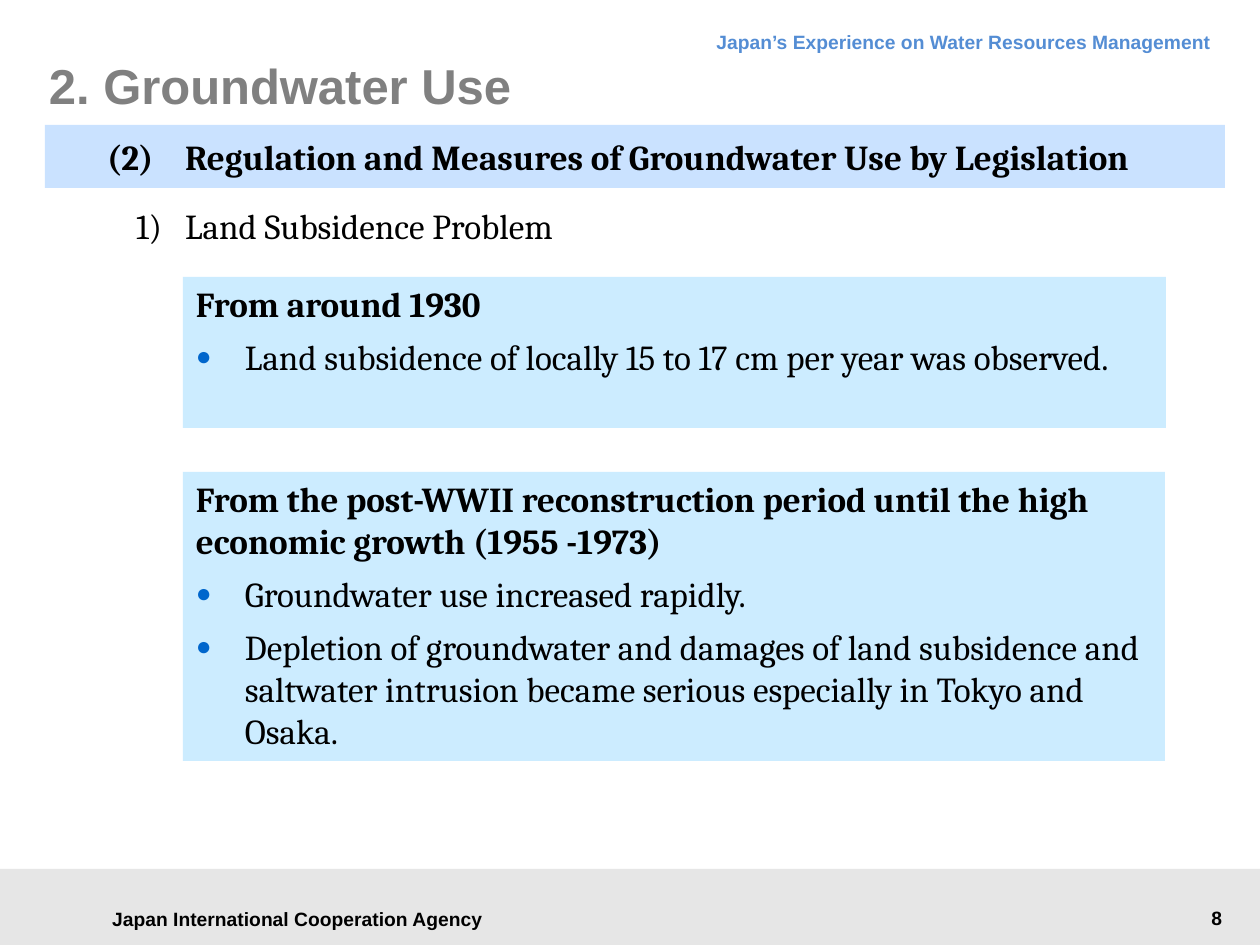
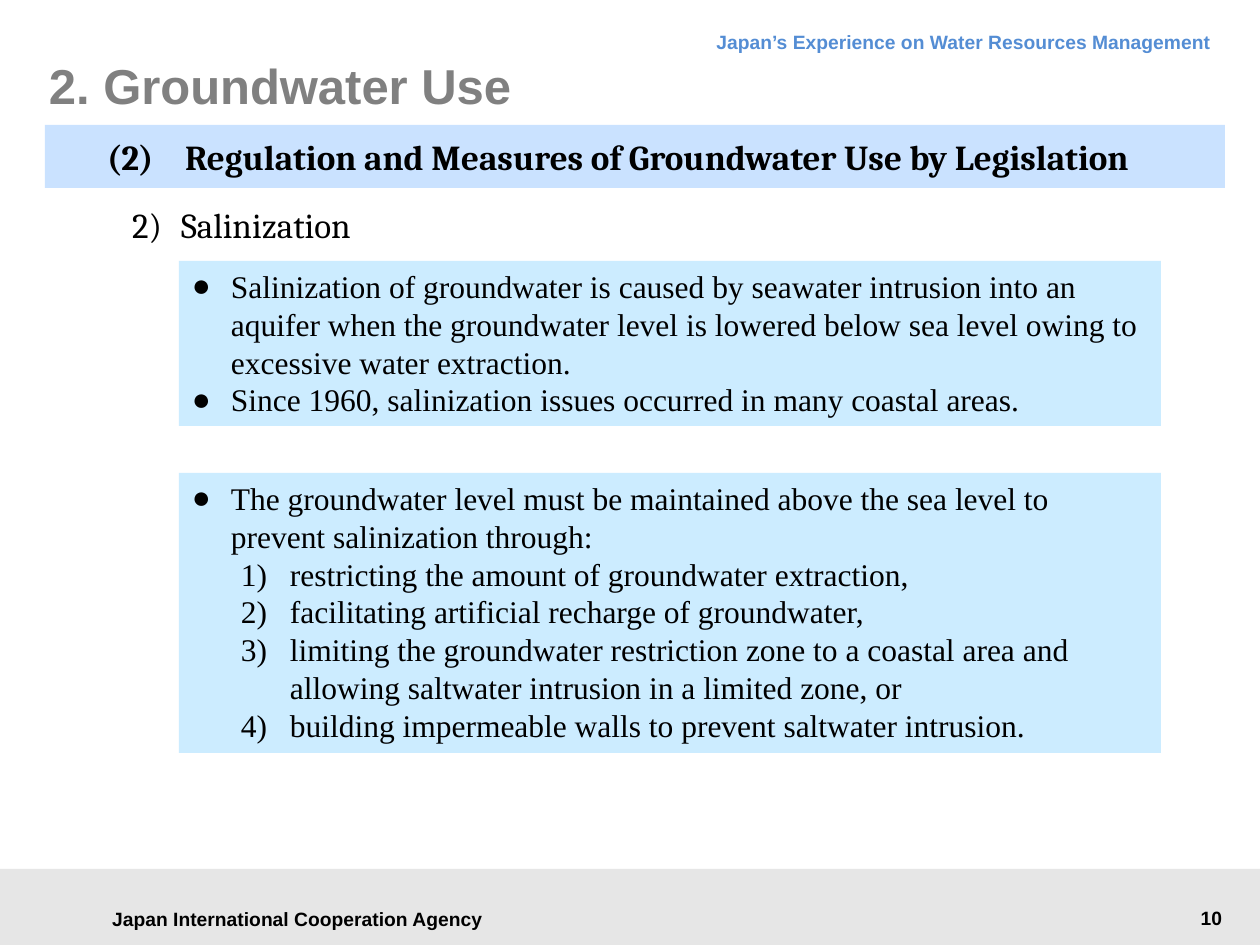
from pptx import Presentation
from pptx.dml.color import RGBColor
from pptx.enum.shapes import MSO_SHAPE as SHAPE
from pptx.enum.text import MSO_ANCHOR as ANCHOR, PP_ALIGN as ALIGN
from pptx.oxml.ns import qn
from pptx.util import Pt
from lxml.etree import SubElement

PX = 914400 / 126
BLACK, GREY, BLUE = "000000", "808080", "548DD4"
FOOTER_FILL, BAND_FILL, PANEL_FILL, BULLET_BLUE = "E6E6E6", "CAE2FF", "CCECFF", "0066CC"
SANS, SERIF, TIMES = "Arial", "Cambria", "Times New Roman"


def px(n):
    return round(n * PX)


def rgb(value):
    return RGBColor.from_string(value)


def add_box(s, box, fill=None, anchor=ANCHOR.TOP, insets=(13, 6, 13, 6)):
    x, y, w, h = map(px, box)
    if fill:
        sp = s.shapes.add_shape(SHAPE.RECTANGLE, x, y, w, h)
        sp.shadow.inherit = False
        sp.fill.solid()
        sp.fill.fore_color.rgb = rgb(fill)
        sp.line.fill.background()
    else:
        sp = s.shapes.add_textbox(x, y, w, h)
    tf = sp.text_frame
    tf.word_wrap = True
    tf.vertical_anchor = anchor
    tf.margin_left, tf.margin_top, tf.margin_right, tf.margin_bottom = map(px, insets)
    return tf


def write(p, text, size, font, color=BLACK, bold=False, align=ALIGN.LEFT):
    p.text = text
    p.alignment = align
    for r in p.runs:
        r.font.size = Pt(size)
        r.font.name = font
        r.font.bold = bold
        r.font.color.rgb = rgb(color)


def indent(p, left, hang):
    pPr = p._p.get_or_add_pPr()
    pPr.set("marL", str(px(left)))
    pPr.set("indent", str(-px(hang)))
    return pPr


def add_bullet(p, hang, color=None, percent=100):
    pPr = indent(p, hang, hang)
    if color:
        SubElement(SubElement(pPr, qn("a:buClr")), qn("a:srgbClr"), val=color)
    SubElement(pPr, qn("a:buSzPct"), val=str(percent * 1000))
    SubElement(pPr, qn("a:buFont"), typeface=SANS)
    SubElement(pPr, qn("a:buChar"), char="●")


def add_number(p, left, hang):
    SubElement(indent(p, left, hang), qn("a:buAutoNum"), type="arabicParenR")


def next_paragraph(tf, first):
    return tf.paragraphs[0] if first else tf.add_paragraph()


def add_frame(s, number):
    add_box(s, (0, 869, 1260, 76), FOOTER_FILL)
    tf = add_box(s, (89, 897, 417, 43), anchor=ANCHOR.MIDDLE)
    write(tf.paragraphs[0], "Japan International Cooperation Agency", 11, SANS,
          bold=True, align=ALIGN.CENTER)
    tf = add_box(s, (343, 16, 881, 48))
    write(tf.paragraphs[0], "Japan’s Experience on Water Resources Management", 11, SANS,
          BLUE, True, ALIGN.RIGHT)
    tf.paragraphs[0].line_spacing = Pt(18)
    tf = add_box(s, (1037, 900, 198, 37))
    write(tf.paragraphs[0], str(number), 11, SANS, bold=True, align=ALIGN.RIGHT)
    tf = add_box(s, (49, 35, 1196, 100), anchor=ANCHOR.MIDDLE, insets=(0, 0, 0, 0))
    write(tf.paragraphs[0], "2. Groundwater Use", 28, SANS, GREY, True)


def add_band(s):
    tf = add_box(s, (45, 125, 1180, 63), BAND_FILL, ANCHOR.MIDDLE, (54, 10, 44, 10))
    indent(tf.paragraphs[0], 86, 78)
    write(tf.paragraphs[0], "(2)\tRegulation and Measures of Groundwater Use by Legislation",
          20, SERIF, bold=True)


def add_topic(s, box, text):
    tf = add_box(s, box)
    indent(tf.paragraphs[0], 49, 49)
    write(tf.paragraphs[0], text, 20, SERIF)


def add_period(s, box, heading, points):
    tf = add_box(s, box, PANEL_FILL)
    write(tf.paragraphs[0], heading, 20, SERIF, bold=True)
    for point in points:
        p = tf.add_paragraph()
        add_bullet(p, 49, BULLET_BLUE, 75)
        p.space_before = Pt(6)
        write(p, point, 20, SERIF)


def add_points(s, box, points, measures=()):
    tf = add_box(s, box, PANEL_FILL)
    for i, point in enumerate(points):
        p = next_paragraph(tf, i == 0)
        add_bullet(p, 39)
        write(p, point, 18, TIMES)
    for measure in measures:
        p = tf.add_paragraph()
        add_number(p, 98, 49)
        write(p, measure, 18, TIMES)


def add_slide(prs, number):
    s = prs.slides.add_slide(prs.slide_layouts[6])
    add_frame(s, number)
    add_band(s)
    return s


def subsidence_slide(prs):
    s = add_slide(prs, 8)
    add_topic(s, (123, 198, 1101, 55), "1)\tLand Subsidence Problem")
    add_period(s, (183, 277, 983, 151), "From around 1930",
               ["Land subsidence of locally 15 to 17 cm per year was observed."])
    add_period(s, (183, 472, 982, 289),
               "From the post-WWII reconstruction period until the high "
               "economic growth (1955 -1973)",
               ["Groundwater use increased rapidly.",
                "Depletion of groundwater and damages of land subsidence and saltwater "
                "intrusion became serious especially in Tokyo and Osaka."])


def salinization_slide(prs):
    s = add_slide(prs, 10)
    add_topic(s, (119, 197, 1101, 55), "2)\tSalinization")
    add_points(s, (179, 261, 982, 165),
               ["Salinization of groundwater is caused by seawater intrusion into an aquifer "
                "when the groundwater level is lowered below sea level owing to excessive "
                "water extraction.",
                "Since 1960, salinization issues occurred in many coastal areas."])
    add_points(s, (179, 473, 982, 280),
               ["The groundwater level must be maintained above the sea level to prevent "
                "salinization through:"],
               ["restricting the amount of groundwater extraction,",
                "facilitating artificial recharge of groundwater,",
                "limiting the groundwater restriction zone to a coastal area and allowing "
                "saltwater intrusion in a limited zone, or",
                "building impermeable walls to prevent saltwater intrusion."])


def main():
    prs = Presentation()
    prs.slide_width, prs.slide_height = px(1260), px(945)
    subsidence_slide(prs)
    salinization_slide(prs)
    prs.save("out.pptx")


if __name__ == "__main__":
    main()
